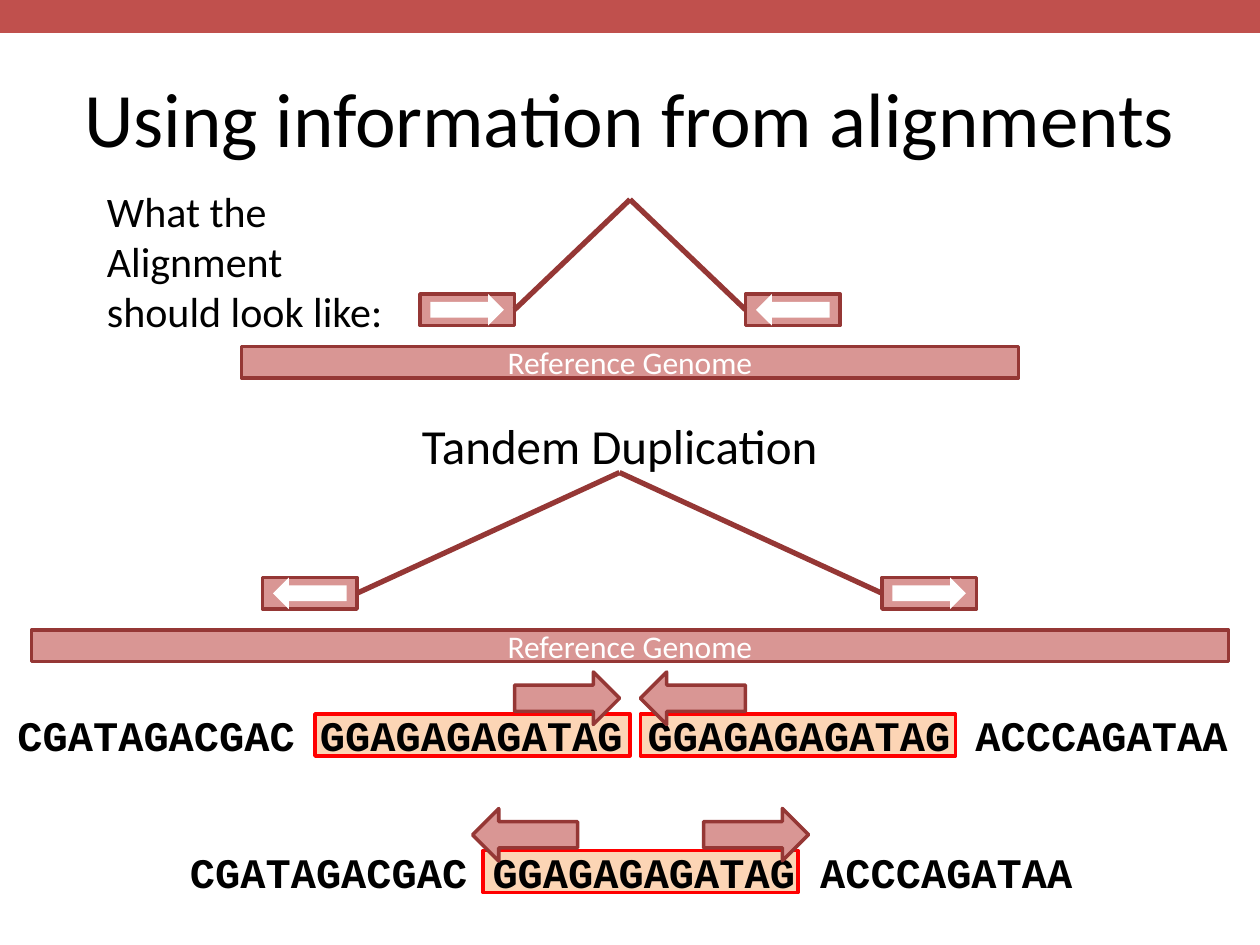
from lxml import etree
from pptx import Presentation
from pptx.dml.color import RGBColor
from pptx.enum.shapes import MSO_CONNECTOR, MSO_SHAPE
from pptx.enum.text import MSO_ANCHOR, MSO_AUTO_SIZE, PP_ALIGN
from pptx.oxml.ns import qn
from pptx.util import Inches, Pt

RECTANGLE, ARROW = MSO_SHAPE.RECTANGLE, MSO_SHAPE.RIGHT_ARROW
STRAIGHT = MSO_CONNECTOR.STRAIGHT
CENTER, MIDDLE = PP_ALIGN.CENTER, MSO_ANCHOR.MIDDLE
GROW = MSO_AUTO_SIZE.SHAPE_TO_FIT_TEXT

BLACK = RGBColor(0x00, 0x00, 0x00)
WHITE = RGBColor(0xFF, 0xFF, 0xFF)
BANNER = RGBColor(0xC0, 0x50, 0x4D)
ROSE = RGBColor(0xD9, 0x96, 0x94)
MAROON = RGBColor(0x95, 0x37, 0x35)
PEACH = RGBColor(0xFC, 0xD5, 0xB5)
RED = RGBColor(0xFF, 0x00, 0x00)

presentation = Presentation()
presentation.slide_width, presentation.slide_height = Inches(10), Inches(7.5)
slide = presentation.slides.add_slide(presentation.slide_layouts[5])
CELL = presentation.slide_width / 120  # the grid has 120 columns and 90 rows


def add_block(kind, column, row, columns, rows, fill, line=None, rotation=0):
    box = [round(CELL * cells) for cells in (column, row, columns, rows)]
    shape = slide.shapes.add_shape(kind, *box)
    shape.shadow.inherit = False
    shape.rotation = rotation
    shape.fill.solid()
    shape.fill.fore_color.rgb = fill
    if line is None:
        shape.line.fill.background()
    else:
        shape.line.color.rgb = line
        shape.line.width = Pt(2)
    return shape


def write(shape, lines, size, color=BLACK, name="Calibri", bold=False, alignment=None):
    frame = shape.text_frame
    frame.text = "\n".join(lines)
    font_format = {"size": Pt(size), "name": name, "bold": bold}
    for paragraph in frame.paragraphs:
        paragraph.alignment = alignment
        font = paragraph.runs[0].font
        font.color.rgb = color
        for attribute, value in font_format.items():
            setattr(font, attribute, value)


# Title and banner
title = slide.shapes.title
title_box = {"left": Inches(0.5), "top": Inches(0.3), "width": Inches(9), "height": Inches(1.25)}
for attribute, value in title_box.items():
    setattr(title, attribute, value)
title.text_frame.vertical_anchor = MIDDLE
write(title, ["Using information from alignments"], 44, alignment=CENTER)
add_block(RECTANGLE, 0, 0, 120, 3, BANNER, BANNER)

# Read pairs above their reference:
# reference column, row and width, read row, apex column and row,
# then column and arrow rotation of the left and the right read
alignments = [
    (23, 33, 74, 28, 60, 19, (40, 0), (71, 180)),
    (3, 60, 114, 55, 59, 45, (25, 180), (84, 0)),
]
for column, row, columns, read_row, apex_column, apex_row, *reads in alignments:
    reference = add_block(RECTANGLE, column, row, columns, 3, ROSE, MAROON)
    reference.text_frame.vertical_anchor = MIDDLE
    write(reference, ["Reference Genome"], 18, WHITE, alignment=CENTER)
    for (read_column, rotation), inner_side in zip(reads, (3, 1)):
        read = add_block(RECTANGLE, read_column, read_row, 9, 3, ROSE, MAROON)
        apex = round(CELL * apex_column), round(CELL * apex_row)
        connector = slide.shapes.add_connector(STRAIGHT, read.left, read.top, *apex)
        connector.begin_connect(read, inner_side)
        connector.line.color.rgb = MAROON
        connector.line.width = Pt(3)
        etree.SubElement(connector._element.spPr, qn("a:effectLst"))
        add_block(ARROW, read_column + 1, read_row, 7, 3, WHITE, rotation=rotation)

# Duplicated segments behind the sequences
for column, row in [(30, 68), (61, 68), (46, 81)]:
    add_block(RECTANGLE, column, row, 30, 4, PEACH, RED)

# Labels and sequences: left, top, width, height in inches, lines, font format
sequence_format = {"size": 24, "name": "Courier New", "bold": True}
labels = [
    (0.04, 5.58, 9.88, 0.5, ["CGATAGACGAC GGAGAGAGATAG GGAGAGAGATAG ACCCAGATAA"], sequence_format),
    (1.41, 6.67, 7.26, 0.5, ["CGATAGACGAC GGAGAGAGATAG ACCCAGATAA"], sequence_format),
    (3.25, 3.25, 3.38, 0.57, ["Tandem Duplication"], {"size": 28}),
    (0.75, 1.42, 2.41, 1.31, ["What the", "Alignment", "should look like:"], {"size": 24}),
]
for *box, lines, text_format in labels:
    label = slide.shapes.add_textbox(*map(Inches, box))
    label.text_frame.word_wrap = False
    label.text_frame.auto_size = GROW
    write(label, lines, **text_format)

# Read directions on the sequences
for column, row, rotation in [(45, 77, 180), (67, 77, 0), (61, 64, 180), (49, 64, 0)]:
    add_block(ARROW, column, row, 10, 5, ROSE, MAROON, rotation)

presentation.save("out.pptx")
